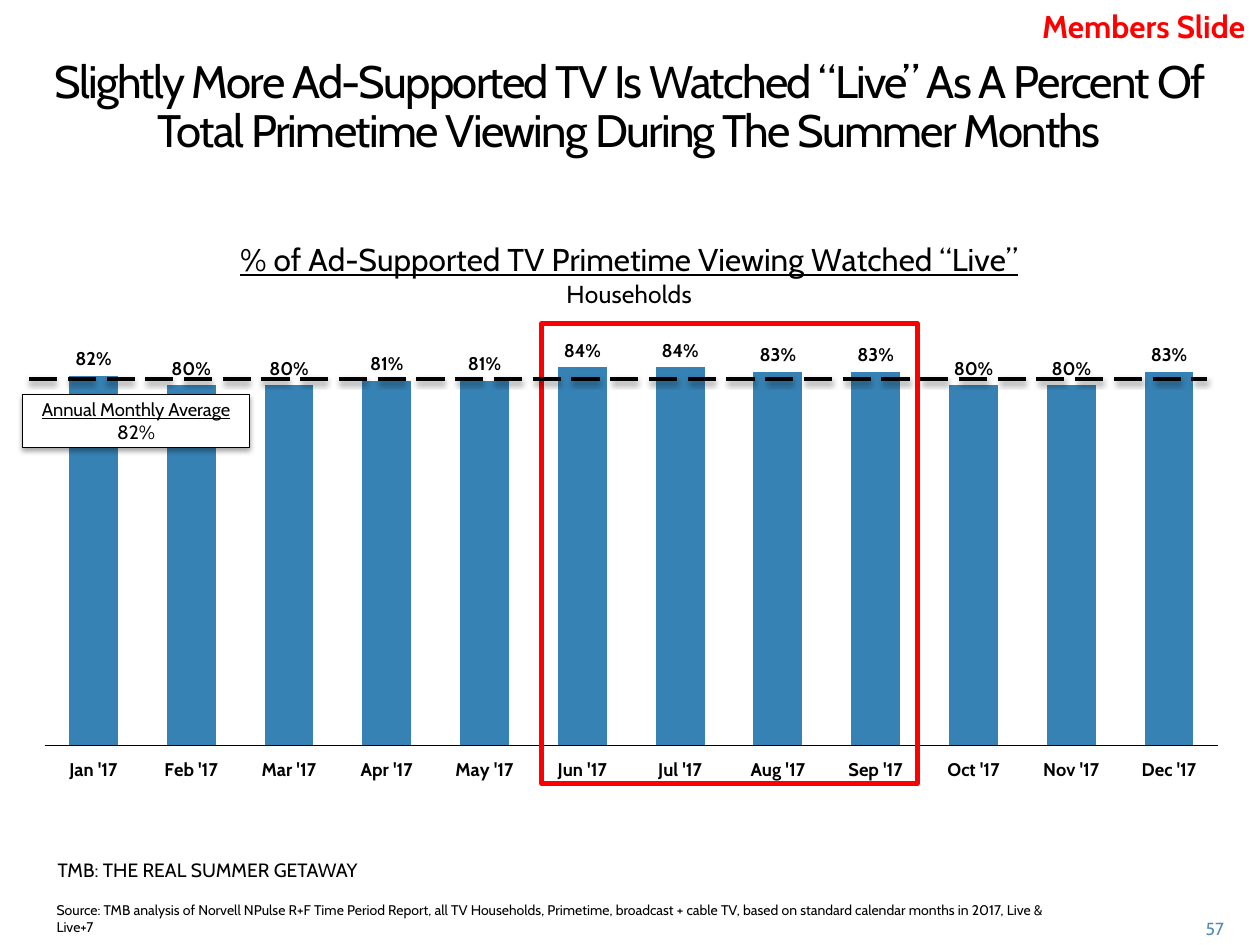
from lxml import etree
from pptx import Presentation
from pptx.chart.data import CategoryChartData
from pptx.dml.color import RGBColor
from pptx.enum.chart import XL_CHART_TYPE as ChartType
from pptx.enum.chart import XL_LABEL_POSITION as LabelPosition
from pptx.enum.chart import XL_TICK_LABEL_POSITION as TickLabel
from pptx.enum.chart import XL_TICK_MARK as TickMark
from pptx.enum.dml import MSO_LINE_DASH_STYLE as Dash
from pptx.enum.shapes import MSO_CONNECTOR, MSO_SHAPE
from pptx.enum.text import MSO_ANCHOR, PP_ALIGN
from pptx.oxml.ns import qn
from pptx.util import Pt

FONT = "Cabin"
COLORS = {"text": "000000", "bar": "3682B4", "alert": "FF0000",
          "page": "508ABA", "white": "FFFFFF"}
LIVE_SHARE = {"Jan": 0.82, "Feb": 0.80, "Mar": 0.80, "Apr": 0.81,
              "May": 0.81, "Jun": 0.84, "Jul": 0.84, "Aug": 0.83,
              "Sep": 0.83, "Oct": 0.80, "Nov": 0.80, "Dec": 0.83}


def color(name):
    return RGBColor.from_string(COLORS[name])


def points(*values):
    return [Pt(value) for value in values]


def style_font(font, size, name="text", bold=False, underline=False):
    font.name, font.size = FONT, Pt(size)
    font.bold, font.underline = bold, underline
    font.color.rgb = color(name)


def add_text(slide, box, text, size, name="text", align=PP_ALIGN.LEFT, bold=False):
    text_box = slide.shapes.add_textbox(*points(*box))
    text_box.text_frame.word_wrap = True
    paragraph = text_box.text_frame.paragraphs[0]
    paragraph.text = text
    paragraph.alignment = align
    style_font(paragraph.runs[0].font, size, name, bold)
    return paragraph


def add_headline(slide, box):
    paragraph = add_text(
        slide, box,
        "Slightly More Ad-Supported TV Is Watched “Live” As A Percent Of "
        "Total Primetime Viewing During The Summer Months",
        26, align=PP_ALIGN.CENTER)
    paragraph.line_spacing = Pt(28)
    paragraph.runs[0].font._element.set("spc", "-100")


def set_layout(parent, index, **values):
    """Place a chart part by fractions of the chart area."""
    for old in parent.findall(qn("c:layout")):
        parent.remove(old)
    layout = etree.Element(qn("c:layout"))
    manual = etree.SubElement(layout, qn("c:manualLayout"))
    for tag, value in values.items():
        etree.SubElement(manual, qn(f"c:{tag}")).set("val", str(value))
    parent.insert(index, layout)


def add_chart_title(chart):
    text_frame = chart.chart_title.text_frame
    text_frame.text = ("% of Ad-Supported TV Primetime Viewing Watched “Live”\n"
                       "Households")
    for paragraph, size, underline in zip(text_frame.paragraphs, (18, 14), (True, False)):
        paragraph.alignment = PP_ALIGN.CENTER
        style_font(paragraph.runs[0].font, size, underline=underline)
    chart.chart_title.include_in_layout = False
    set_layout(chart.chart_title._element, 1, xMode="edge", yMode="edge", x=0.176, y=0.043)


def add_live_chart(slide, box):
    data = CategoryChartData(number_format="0%")
    data.categories = [f"{month} '17" for month in LIVE_SHARE]
    data.add_series("Series 1", LIVE_SHARE.values())
    chart = slide.shapes.add_chart(ChartType.COLUMN_CLUSTERED, *points(*box), data).chart
    chart.has_legend = False
    style_font(chart.font, 10)
    add_chart_title(chart)
    set_layout(chart._chartSpace.chart.plotArea, 0, layoutTarget="inner",
               xMode="edge", yMode="edge", x=0.018, y=0.142, w=0.967, h=0.743)

    months = chart.category_axis
    months.major_tick_mark = months.minor_tick_mark = TickMark.NONE
    months.tick_label_position = TickLabel.LOW
    months.format.line.color.rgb = color("text")
    months.format.line.width = Pt(0.75)
    style_font(months.tick_labels.font, 10.5, bold=True)

    shares = chart.value_axis
    shares.minimum_scale, shares.maximum_scale = 0, 1
    shares.has_major_gridlines = False
    shares.visible = False

    plot = chart.plots[0]
    plot.gap_width, plot.overlap = 100, -27
    plot.vary_by_categories = False
    fill = plot.series[0].format.fill
    fill.solid()
    fill.fore_color.rgb = color("bar")
    plot.has_data_labels = True
    labels = plot.data_labels
    labels.show_value = True
    labels.number_format, labels.number_format_is_linked = "0%", False
    labels.position = LabelPosition.OUTSIDE_END
    style_font(labels.font, 10.5, bold=True)


def add_shadow(shape, distance, opacity):
    """Give a shape a soft shadow straight below it."""
    properties = shape._element.spPr
    for old in properties.findall(qn("a:effectLst")):
        properties.remove(old)
    effects = etree.SubElement(properties, qn("a:effectLst"))
    shadow = etree.SubElement(
        effects, qn("a:outerShdw"), blurRad=str(Pt(3.1)), dist=str(Pt(distance)),
        dir="5400000", rotWithShape="0")
    tint = etree.SubElement(shadow, qn("a:srgbClr"), val=COLORS["text"])
    etree.SubElement(tint, qn("a:alpha"), val=str(opacity * 1000))


def add_frame(slide, box, line_name, width):
    frame = slide.shapes.add_shape(MSO_SHAPE.RECTANGLE, *points(*box))
    frame.shadow.inherit = False
    frame.fill.background()
    frame.line.color.rgb = color(line_name)
    frame.line.width = Pt(width)
    return frame


def add_average_label(slide, box):
    label = add_frame(slide, box, "text", 0.75)
    label.fill.solid()
    label.fill.fore_color.rgb = color("white")
    add_shadow(label, 1.8, 35)
    text_frame = label.text_frame
    text_frame.word_wrap = True
    text_frame.vertical_anchor = MSO_ANCHOR.MIDDLE
    text_frame.text = "Annual Monthly Average\n82%"
    for paragraph, size, underline in zip(text_frame.paragraphs, (10.5, 11), (True, False)):
        paragraph.alignment = PP_ALIGN.CENTER
        style_font(paragraph.runs[0].font, size, underline=underline)


def add_average_line(slide, left, top, width):
    line = slide.shapes.add_connector(
        MSO_CONNECTOR.STRAIGHT, *points(left, top, left + width, top))
    line.line.color.rgb = color("text")
    line.line.width = Pt(2)
    line.line.dash_style = Dash.LONG_DASH
    add_shadow(line, 1.6, 38)


def add_footer(slide, left, top):
    add_text(slide, (left, top, 188, 34), "TMB: THE REAL SUMMER GETAWAY", 11)
    add_text(slide, (left - 0.7, top + 25.2, 582.5, 19),
             "Source: TMB analysis of Norvell NPulse R+F Time Period Report, all TV "
             "Households, Primetime, broadcast + cable TV, based on standard calendar "
             "months in 2017, Live & Live+7", 8)
    add_text(slide, (left + 636.5, top + 34.5, 44, 18), "57", 10, "page", PP_ALIGN.RIGHT)


def main():
    presentation = Presentation()
    presentation.slide_width, presentation.slide_height = points(720, 540)
    slide = presentation.slides.add_slide(presentation.slide_layouts[6])
    add_headline(slide, (13, 30.2, 693.4, 70))
    add_live_chart(slide, (13, 119.5, 693.4, 346.3))
    add_frame(slide, (309.6, 185, 214.6, 262.8), "alert", 3)
    add_average_label(slide, (13, 225.4, 129.6, 30.2))
    add_average_line(slide, 16.6, 216.7, 673.2)
    add_text(slide, (581, 0.7, 137.5, 29), "Members Slide", 18, "alert",
             PP_ALIGN.RIGHT, bold=True)
    add_footer(slide, 25.9, 486.7)
    presentation.save("out.pptx")


if __name__ == "__main__":
    main()
